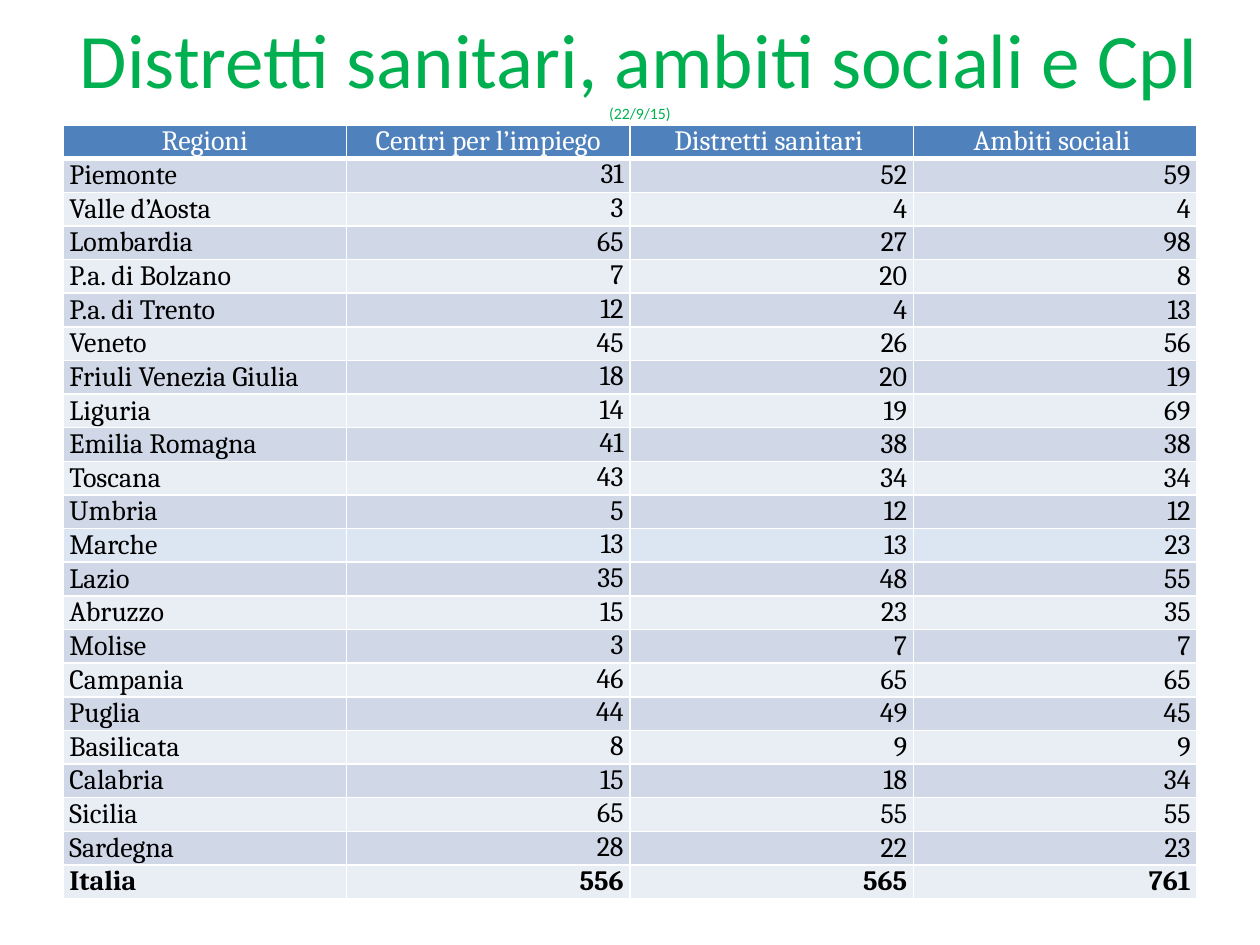
from dataclasses import dataclass

from lxml import etree
from pptx import Presentation
from pptx.dml.color import RGBColor
from pptx.enum.text import MSO_ANCHOR, PP_ALIGN
from pptx.oxml.ns import qn
from pptx.slide import Slide
from pptx.table import _Cell
from pptx.text.text import _Run
from pptx.util import Cm, Pt

CENTER, RIGHT, JUSTIFY = PP_ALIGN.CENTER, PP_ALIGN.RIGHT, PP_ALIGN.JUSTIFY
TOP, MIDDLE = MSO_ANCHOR.TOP, MSO_ANCHOR.MIDDLE


@dataclass(frozen=True)
class Theme:
    title_font: str = "Calibri"
    table_font: str = "Cambria"
    title_size: int = 44
    date_size: int = 9
    table_size: int = 16
    title: str = "00B050"
    header: str = "4F81BD"
    header_text: str = "FFFFFF"
    body_text: str = "000000"
    bands: tuple[str, str] = ("D0D8E8", "E9EDF4")
    highlight: str = "DCE6F2"
    border: str = "FFFFFF"
    thin: int = 1
    thick: int = 3


@dataclass(frozen=True)
class Region:
    name: str
    job_centres: int
    districts: int
    social_areas: int

    def texts(self) -> list[str]:
        return [self.name, str(self.job_centres), str(self.districts), str(self.social_areas)]


THEME = Theme()
HEADINGS = ["Regioni", "Centri per l’impiego", "Distretti sanitari ", "Ambiti sociali "]
HIGHLIGHTED = "Marche"
REGIONS = [
    Region("Piemonte", 31, 52, 59),
    Region("Valle d’Aosta", 3, 4, 4),
    Region("Lombardia", 65, 27, 98),
    Region("P.a. di Bolzano", 7, 20, 8),
    Region("P.a. di Trento", 12, 4, 13),
    Region("Veneto", 45, 26, 56),
    Region("Friuli Venezia Giulia", 18, 20, 19),
    Region("Liguria", 14, 19, 69),
    Region("Emilia Romagna", 41, 38, 38),
    Region("Toscana", 43, 34, 34),
    Region("Umbria", 5, 12, 12),
    Region("Marche", 13, 13, 23),
    Region("Lazio", 35, 48, 55),
    Region("Abruzzo", 15, 23, 35),
    Region("Molise", 3, 7, 7),
    Region("Campania", 46, 65, 65),
    Region("Puglia", 44, 49, 45),
    Region("Basilicata", 8, 9, 9),
    Region("Calabria", 15, 18, 34),
    Region("Sicilia", 65, 55, 55),
    Region("Sardegna", 28, 22, 23),
]
TOTAL = Region("Italia", 556, 565, 761)


def style_run(r: _Run, font: str, size: int, color: str, bold: bool = False) -> None:
    r.font.name = font
    r.font.size = Pt(size)
    r.font.bold = bold
    r.font.color.rgb = RGBColor.from_string(color)


def add_title(s: Slide) -> None:
    tf = s.shapes.add_textbox(Cm(1.1), Cm(0), Cm(23.6), Cm(2.72)).text_frame
    tf.word_wrap = True
    tf.vertical_anchor = MIDDLE
    p = tf.paragraphs[0]
    p.alignment = CENTER
    for text, size in (
        ("Distretti sanitari, ambiti sociali e CpI ", THEME.title_size),
        ("(22/9/15)", THEME.date_size),
    ):
        r = p.add_run()
        r.text = text
        style_run(r, THEME.title_font, size, THEME.title)


def set_borders(cell: _Cell, top: int, bottom: int) -> None:
    tc_pr = cell._tc.get_or_add_tcPr()
    widths = {"a:lnL": THEME.thin, "a:lnR": THEME.thin, "a:lnT": top, "a:lnB": bottom}
    for tag, width in widths.items():
        ln = etree.SubElement(tc_pr, qn(tag), w=str(Pt(width)))
        fill = etree.SubElement(ln, qn("a:solidFill"))
        etree.SubElement(fill, qn("a:srgbClr"), val=THEME.border)


def fill_cell(cell: _Cell, text: str, row: int, col: int, fill: str) -> None:
    header = row == 0
    set_borders(
        cell,
        top=THEME.thick if row == 1 else THEME.thin,
        bottom=THEME.thick if header else THEME.thin,
    )
    cell.fill.solid()
    cell.fill.fore_color.rgb = RGBColor.from_string(fill)
    cell.margin_left = cell.margin_right = Cm(0.13)
    cell.margin_top = cell.margin_bottom = Cm(0)
    cell.vertical_anchor = TOP if col == 1 else MIDDLE
    cell.text_frame.text = text
    p = cell.text_frame.paragraphs[0]
    p.alignment = CENTER if header else JUSTIFY if col == 0 else RIGHT
    p.space_before = Pt(6 if header else 2)
    p.space_after = Pt(2)
    color = THEME.header_text if header else THEME.body_text
    bold = row == len(REGIONS) + 1
    style_run(p.runs[0], THEME.table_font, THEME.table_size, color, bold)


def row_fill(row: int, name: str) -> str:
    if row == 0:
        return THEME.header
    if name == HIGHLIGHTED:
        return THEME.highlight
    return THEME.bands[(row - 1) % 2]


def add_region_table(s: Slide) -> None:
    rows = [HEADINGS, *(region.texts() for region in [*REGIONS, TOTAL])]
    frame = s.shapes.add_table(
        len(rows), len(HEADINGS), Cm(1.27), Cm(2.52), Cm(22.86), Cm(15.57)
    )
    for i, texts in enumerate(rows):
        for j, text in enumerate(texts):
            fill_cell(frame.table.cell(i, j), text, i, j, row_fill(i, texts[0]))


def main() -> None:
    prs = Presentation()
    prs.slide_width, prs.slide_height = Cm(25.4), Cm(19.05)
    s = prs.slides.add_slide(prs.slide_layouts[6])
    add_title(s)
    add_region_table(s)
    prs.save("out.pptx")


if __name__ == "__main__":
    main()
